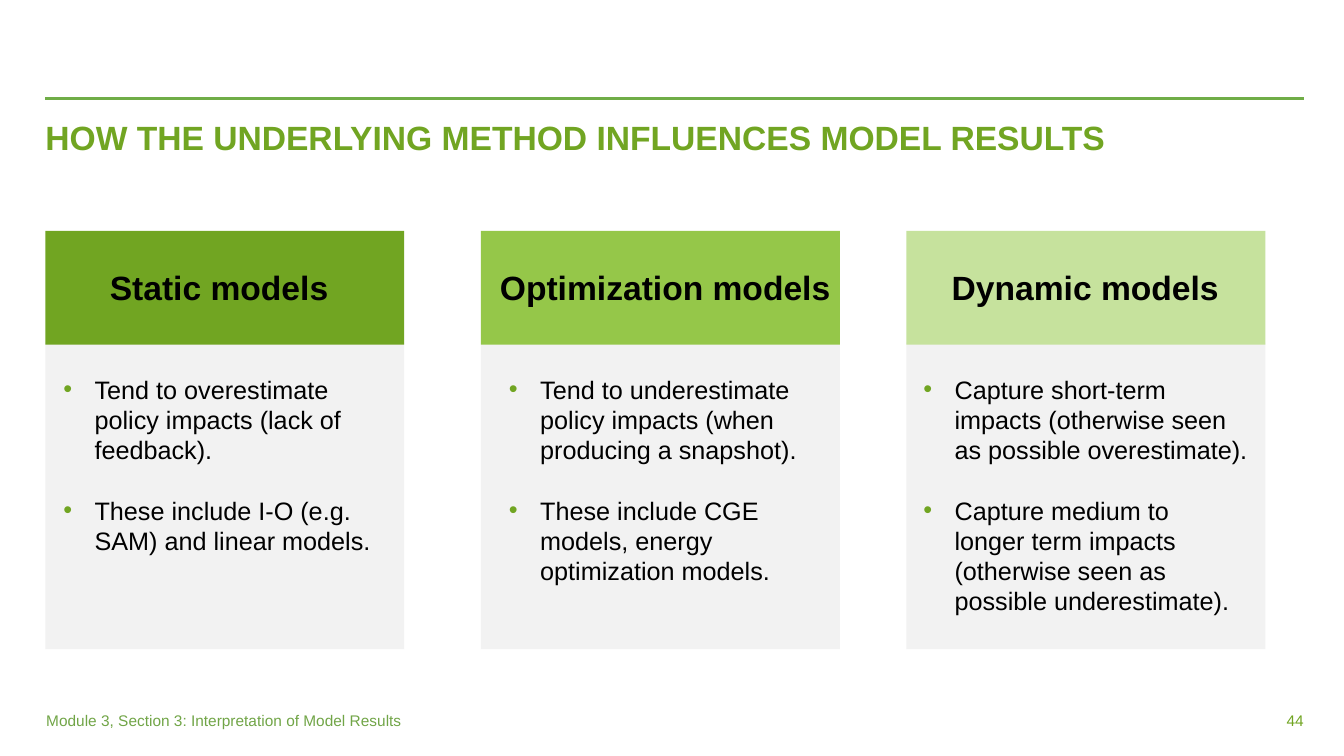
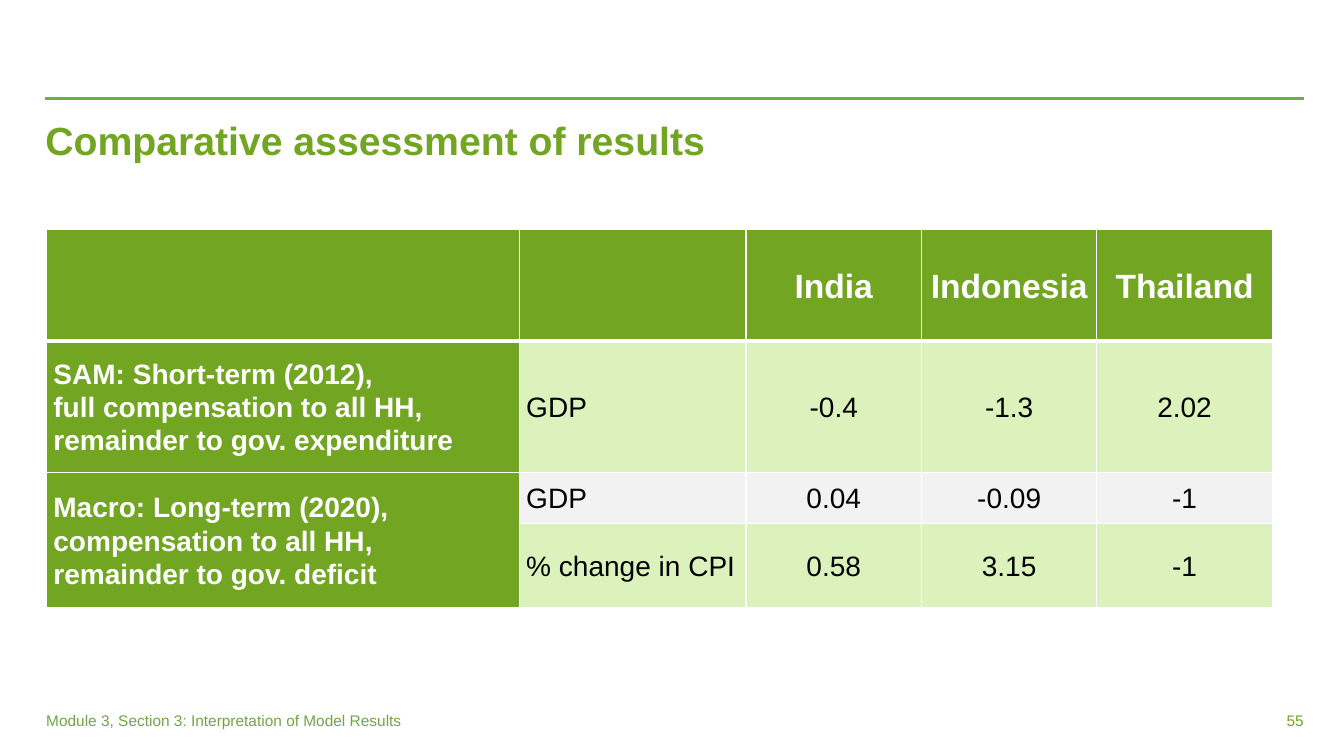
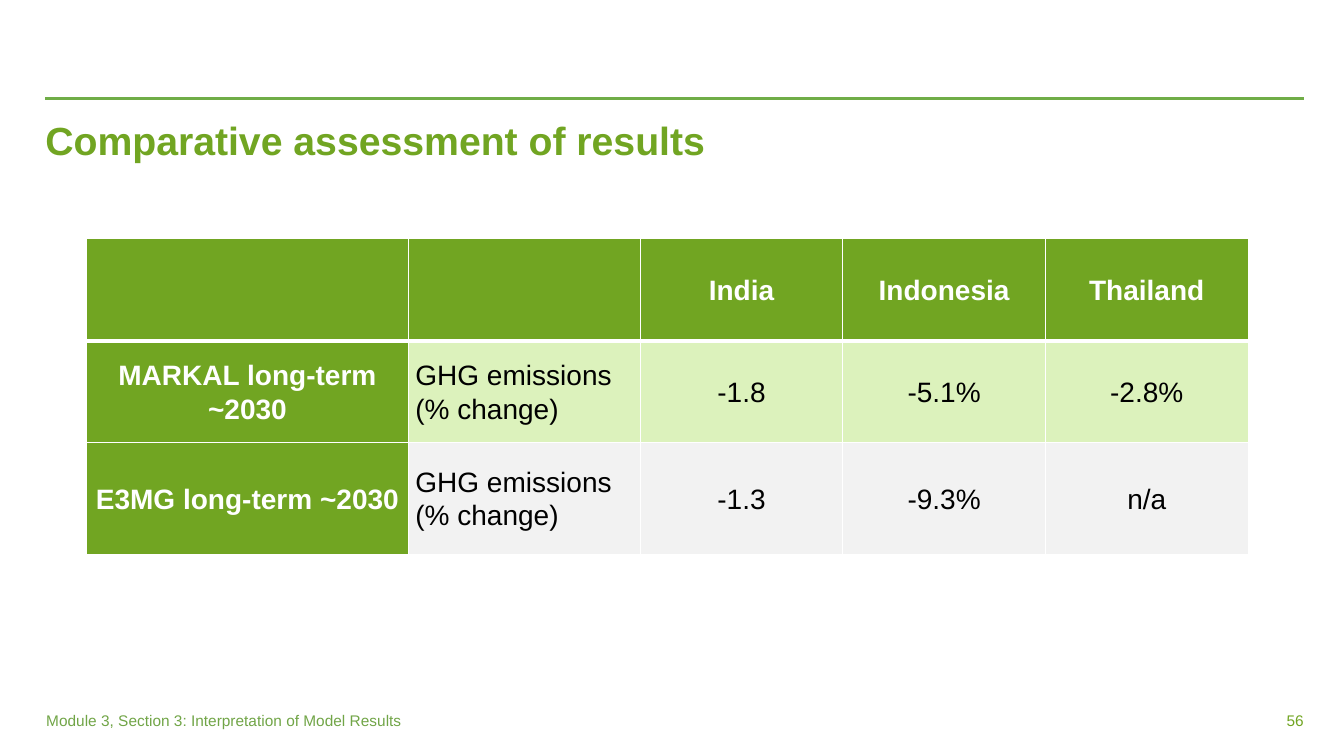
from lxml import etree
from pptx import Presentation
from pptx.dml.color import RGBColor
from pptx.enum.shapes import MSO_CONNECTOR, MSO_SHAPE
from pptx.enum.text import MSO_ANCHOR, PP_ALIGN
from pptx.oxml.ns import qn
from pptx.util import Pt

PX = 9144
FONT = "Arial"
GREEN, RULE_GREEN, FOOTER_GREEN = "71A522", "70AD47", "71A547"
GREY, PALE_GREEN, WHITE, BLACK = "F2F2F2", "DCF2BC", "FFFFFF", "000000"
LEFT, CENTER, RIGHT = PP_ALIGN.LEFT, PP_ALIGN.CENTER, PP_ALIGN.RIGHT
TOP, MIDDLE = MSO_ANCHOR.TOP, MSO_ANCHOR.MIDDLE
STRAIGHT, RECTANGLE = MSO_CONNECTOR.STRAIGHT, MSO_SHAPE.RECTANGLE


def color(value):
    return RGBColor.from_string(value)


def add_text(page, area, lines, size, fill, bold=False, align=LEFT, anchor=TOP,
             inset_left=10, inset_right=10, wrap=True, bullet=False):
    box = page.shapes.add_textbox(*[PX * length for length in area])
    frame = box.text_frame
    frame.word_wrap = wrap
    frame.vertical_anchor = anchor
    frame.margin_left, frame.margin_right = PX * inset_left, PX * inset_right
    for index, line in enumerate(lines):
        para = frame.add_paragraph() if index else frame.paragraphs[0]
        para.text = line
        para.alignment = align
        if index:
            para.space_before = Pt(size * 1.2)
        if bullet:
            properties = para._p.get_or_add_pPr()
            properties.set("marL", str(31 * PX))
            properties.set("indent", str(-31 * PX))
            tint = etree.SubElement(properties, qn("a:buClr"))
            etree.SubElement(tint, qn("a:srgbClr"), val=GREEN)
            etree.SubElement(properties, qn("a:buFont"), typeface=FONT)
            etree.SubElement(properties, qn("a:buChar"), char="•")
        para.font.name, para.font.size, para.font.bold = FONT, Pt(size), bold
        para.font.color.rgb = color(fill)
    return box


deck = Presentation()
deck.slide_width, deck.slide_height = 1333 * PX, 750 * PX

pages = []
for title, title_size, number in [
    ("HOW THE UNDERLYING METHOD INFLUENCES MODEL RESULTS", 24, 44),
    ("Comparative assessment of results", 28, 55),
    ("Comparative assessment of results", 28, 56),
]:
    page = deck.slides.add_slide(deck.slide_layouts[6])
    pages.append(page)
    rule = page.shapes.add_connector(STRAIGHT, 45 * PX, 98 * PX, 1293 * PX, 98 * PX)
    rule.line.color.rgb = color(RULE_GREEN)
    rule.line.width = Pt(2)
    etree.SubElement(rule._element.spPr, qn("a:effectLst"))
    heading = add_text(page, (45, 116, 1248, 51), [title], title_size, GREEN,
                       bold=True, inset_left=0, inset_right=0)
    heading.text_frame.paragraphs[0].line_spacing = 0.9
    add_text(page, (36, 701, 401, 40),
             ["Module 3, Section 3: Interpretation of Model Results"], 11, FOOTER_GREEN)
    add_text(page, (1182, 695, 111, 40), [str(number)], 11, GREEN,
             align=RIGHT, anchor=MIDDLE, inset_right=0)

cards = [
    (45, GREEN, "Static models", (99, 239), (53, 332), [
        "Tend to overestimate policy impacts (lack of feedback).",
        "These include I-O (e.g. SAM) and linear models."]),
    (477, "95C749", "Optimization models", (486, 351), (495, 320), [
        "Tend to underestimate policy impacts (when producing a snapshot).",
        "These include CGE models, energy optimization models."]),
    (899, "C6E29D", "Dynamic models", (934, 288), (906, 343), [
        "Capture short-term impacts (otherwise seen as possible overestimate).",
        "Capture medium to\vlonger term impacts (otherwise seen as possible underestimate)."]),
]
for left, band_color, name, (name_left, name_width), (body_left, body_width), points in cards:
    for top, height, fill in [(340, 304, GREY), (229, 113, band_color)]:
        panel = page_shape = pages[0].shapes.add_shape(
            RECTANGLE, left * PX, top * PX, 356 * PX, height * PX)
        panel.shadow.inherit = False
        panel.fill.solid()
        panel.fill.fore_color.rgb = color(fill)
        panel.line.fill.background()
    add_text(pages[0], (name_left, 260, name_width, 50), [name], 24, BLACK,
             bold=True, wrap=False)
    add_text(pages[0], (body_left, 366, body_width, 252), points, 18, BLACK, bullet=True)

countries = ["", "", "India", "Indonesia", "Thailand"]
tables = [
    (pages[1], (46, 228), [469, 225, 174, 174, 174], [110, 131, 50, 84], 24, LEFT, [
        countries,
        ["SAM: Short-term (2012),\vfull compensation to all HH, remainder to gov. expenditure",
         "GDP", "-0.4", "-1.3", "2.02"],
        ["Macro: Long-term (2020),\vcompensation to all HH, remainder to gov. deficit",
         "GDP", "0.04", "-0.09", "-1"],
        ["", "% change in CPI", "0.58", "3.15", "-1"]]),
    (pages[2], (86, 237), [319, 230, 201, 201, 201], [101, 101, 111], 20, CENTER, [
        countries,
        ["MARKAL long-term ~2030", "GHG emissions (% change)", "-1.8", "-5.1%", "-2.8%"],
        ["E3MG long-term ~2030", "GHG emissions (% change)", "-1.3", "-9.3%", "n/a"]]),
]
for page, (left, top), widths, heights, header_size, label_align, rows in tables:
    table = page.shapes.add_table(len(rows), len(widths), left * PX, top * PX,
                                  sum(widths) * PX, sum(heights) * PX).table
    table.first_row = table.horz_banding = False
    for column, width in zip(table.columns, widths):
        column.width = width * PX
    for row, height in zip(table.rows, heights):
        row.height = height * PX
    for row_index, values in enumerate(rows):
        for column_index, value in enumerate(values):
            cell = table.cell(row_index, column_index)
            is_header = row_index == 0
            is_green = is_header or column_index == 0
            cell.vertical_anchor = MIDDLE
            cell.margin_left = cell.margin_right = 7 * PX
            cell.margin_top = cell.margin_bottom = 0
            for side in ("L", "R", "T", "B"):
                thick = (row_index, side) in [(0, "B"), (1, "T")]
                border = etree.SubElement(cell._tc.get_or_add_tcPr(), qn("a:ln" + side),
                                          w=str(Pt(3 if thick else 1)))
                paint = etree.SubElement(border, qn("a:solidFill"))
                etree.SubElement(paint, qn("a:srgbClr"), val=WHITE)
            cell.fill.solid()
            band = PALE_GREEN if row_index % 2 else GREY
            cell.fill.fore_color.rgb = color(GREEN if is_green else band)
            para = cell.text_frame.paragraphs[0]
            para.text = value
            para.line_spacing = 1.07
            para.alignment = CENTER
            if not is_header and column_index < 2:
                para.alignment = LEFT if column_index else label_align
            para.font.name, para.font.bold = FONT, is_green
            para.font.size = Pt(header_size if is_header else 20)
            para.font.color.rgb = color(WHITE if is_green else BLACK)
    if len(rows) == 4:
        table.cell(2, 0).merge(table.cell(3, 0))

deck.save("out.pptx")
